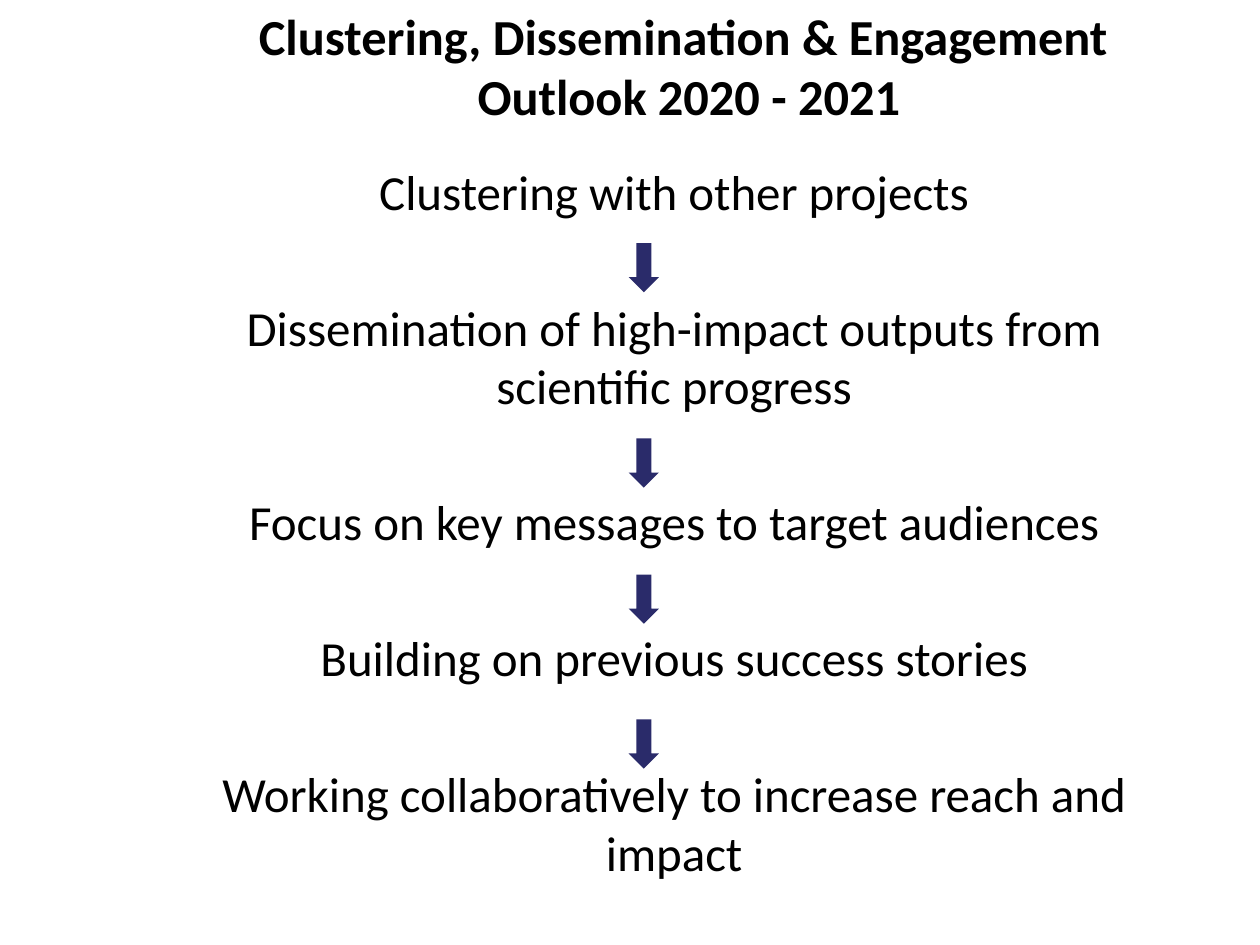
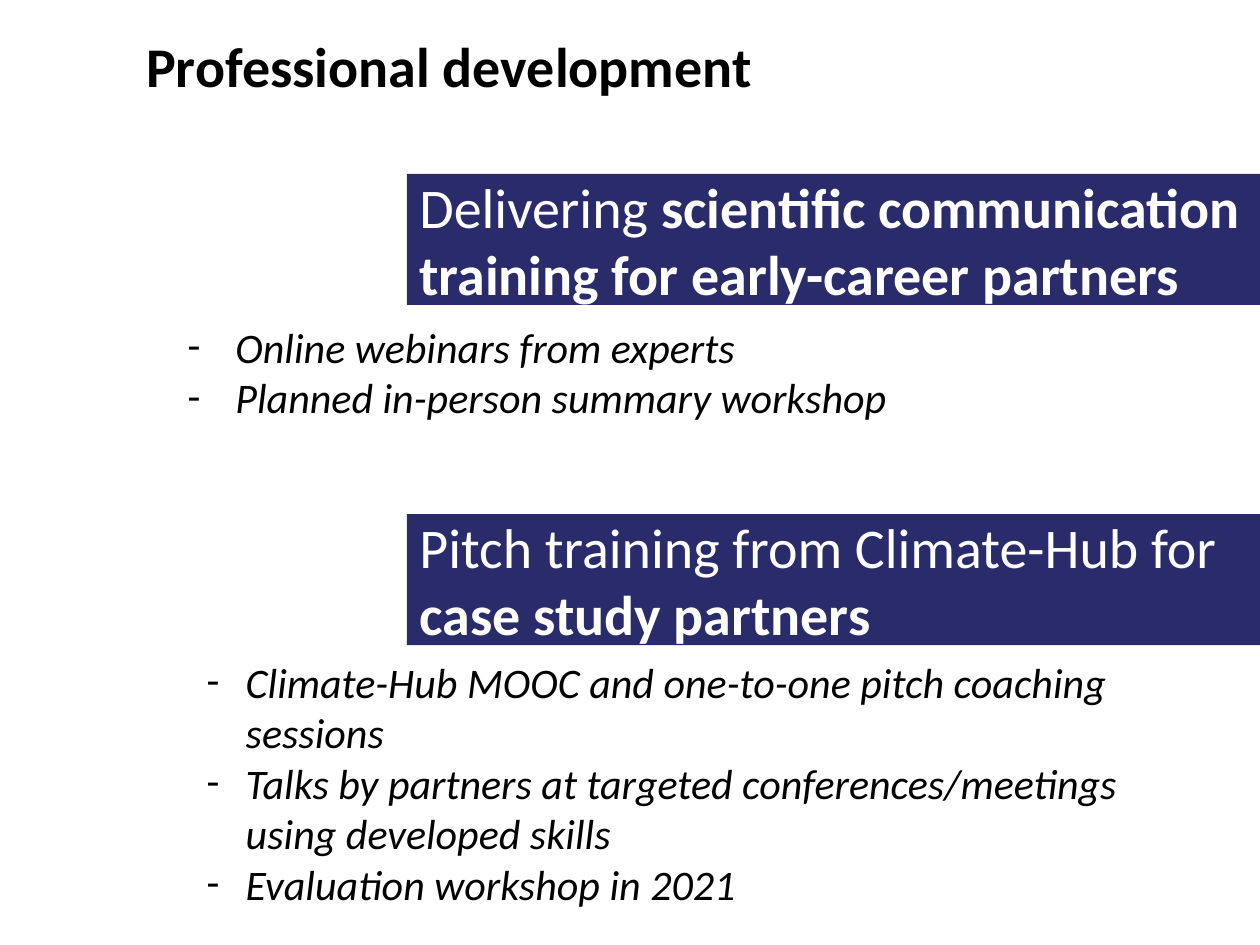
"""Build two slides on outreach and professional development."""
from dataclasses import dataclass

from lxml.etree import SubElement
from pptx import Presentation
from pptx.dml.color import RGBColor
from pptx.enum.shapes import MSO_SHAPE
from pptx.enum.text import MSO_ANCHOR, MSO_AUTO_SIZE, PP_ALIGN
from pptx.oxml.ns import qn
from pptx.util import Pt

SCALE = 9144


@dataclass(frozen=True)
class Theme:
    """Colours, font and type sizes of the deck."""
    font: str = "Calibri"
    ink: str = "000000"
    navy: str = "2A2B6A"
    white: str = "FFFFFF"
    head: float = 32
    outlook: float = 28.8
    step: float = 28
    item: float = 24
    gap: float = 44


@dataclass(frozen=True)
class Box:
    """Place and size in px."""
    left: int
    top: int
    width: int
    height: int

    def emu(self) -> tuple[int, ...]:
        """Return the four lengths in EMU."""
        return tuple(n * SCALE for n in (self.left, self.top, self.width, self.height))


@dataclass(frozen=True)
class Band:
    """Filled heading with a plain lead and a bold end."""
    top: int
    lead: str
    strong: str


THEME = Theme()
TITLE = Box(106, 5, 882, 94)
STEPS = Box(161, 123, 748, 602)
ARROWS = (193, 348, 456, 571)
FLOW = (
    "Clustering with other projects",
    "Dissemination of high-impact outputs from scientific progress",
    "Focus on key messages to target audiences",
    "Building on previous success stories",
    "Working collaboratively to increase reach and impact",
)
BANDS = (
    Band(138, "Delivering ", "scientific communication training for early-career partners"),
    Band(408, "Pitch training from Climate-Hub for ", "case study partners"),
)
TALKS = ("Online webinars from experts", "Planned in-person summary workshop")
PITCHES = (
    "Climate-Hub MOOC and one-to-one pitch coaching sessions",
    "Talks by partners at targeted conferences/meetings using developed skills",
    "Evaluation workshop in 2021",
)


def place(shape, box: Box) -> None:
    """Move a shape into its box."""
    shape.left, shape.top, shape.width, shape.height = box.emu()


def style(run, size: float, colour: str = THEME.ink, bold: bool = False,
          slant: bool = False) -> None:
    """Format one run."""
    font = run.font
    font.name, font.size, font.bold, font.italic = THEME.font, Pt(size), bold, slant
    font.color.rgb = RGBColor.from_string(colour)


def bullet(para, left: int, hang: int, mark: str = "") -> None:
    """Set the indent and the mark of a paragraph."""
    props = para._p.get_or_add_pPr()
    props.set("marL", str(left * SCALE))
    props.set("indent", str(-hang * SCALE))
    if mark:
        SubElement(props, qn("a:buFont")).set("typeface", THEME.font)
        SubElement(props, qn("a:buChar")).set("char", mark)
    else:
        SubElement(props, qn("a:buNone"))


def page(deck, layout: int, text: str, size: float, align: PP_ALIGN):
    """Add a slide with its title."""
    slide = deck.slides.add_slide(deck.slide_layouts[layout])
    title = slide.shapes.title
    place(title, TITLE)
    frame = title.text_frame
    frame.text = text
    frame.auto_size = MSO_AUTO_SIZE.NONE
    frame.vertical_anchor = MSO_ANCHOR.MIDDLE
    para = frame.paragraphs[0]
    para.alignment = align
    for run in para.runs:
        style(run, size, bold=True)
    return slide


def fill(shape, box: Box, lines: tuple[str, ...]):
    """Place a text shape, write its lines and return its paragraphs."""
    place(shape, box)
    frame = shape.text_frame
    frame.text = "\n".join(lines)
    frame.word_wrap = True
    frame.auto_size = MSO_AUTO_SIZE.NONE
    return frame.paragraphs


def dashes(shape, box: Box, lines: tuple[str, ...], left: int, hang: int,
           level: int = 0) -> None:
    """Write a list of slanted lines with dashes."""
    for para in fill(shape, box, lines):
        para.level = level
        bullet(para, left, hang, "-")
        para.alignment = PP_ALIGN.LEFT
        para.space_before = Pt(0)
        style(para.runs[0], THEME.item, slant=True)


def block(slide, kind: MSO_SHAPE, box: Box):
    """Add a navy shape with no line."""
    shape = slide.shapes.add_shape(kind, *box.emu())
    shape.shadow.inherit = False
    shape.fill.solid()
    shape.fill.fore_color.rgb = RGBColor.from_string(THEME.navy)
    shape.line.fill.background()
    return shape


def banner(slide, band: Band) -> None:
    """Draw one heading band."""
    shape = block(slide, MSO_SHAPE.RECTANGLE, Box(323, band.top, 705, 104))
    frame = shape.text_frame
    frame.text = band.lead
    frame.word_wrap = True
    frame.vertical_anchor = MSO_ANCHOR.MIDDLE
    para = frame.paragraphs[0]
    para.alignment = PP_ALIGN.LEFT
    style(para.runs[0], THEME.head, THEME.white)
    strong = para.add_run()
    strong.text = band.strong
    style(strong, THEME.head, THEME.white, bold=True)


def outlook(deck) -> None:
    """Build the flow of outreach steps."""
    slide = page(deck, 1, "Clustering, Dissemination & Engagement \vOutlook 2020 - 2021",
                 THEME.outlook, PP_ALIGN.CENTER)
    for spot, para in enumerate(fill(slide.placeholders[1], STEPS, FLOW)):
        bullet(para, 0, 0)
        para.alignment = PP_ALIGN.CENTER
        para.space_before = Pt(THEME.gap if spot else 0)
        style(para.runs[0], THEME.step)
    for top in ARROWS:
        block(slide, MSO_SHAPE.DOWN_ARROW, Box(499, top, 24, 39))


def training(deck) -> None:
    """Build the training slide."""
    slide = page(deck, 1, "Professional development", THEME.head, PP_ALIGN.LEFT)
    dashes(slide.placeholders[1], Box(104, 516, 827, 214), PITCHES, 81, 31, 1)
    box = Box(139, 250, 850, 91)
    dashes(slide.shapes.add_textbox(*box.emu()), box, TALKS, 38, 38)
    for band in BANDS:
        banner(slide, band)


def main() -> None:
    """Build and save the deck."""
    deck = Presentation()
    deck.slide_width, deck.slide_height = 1000 * SCALE, 750 * SCALE
    outlook(deck)
    training(deck)
    deck.save("out.pptx")


if __name__ == "__main__":
    main()
